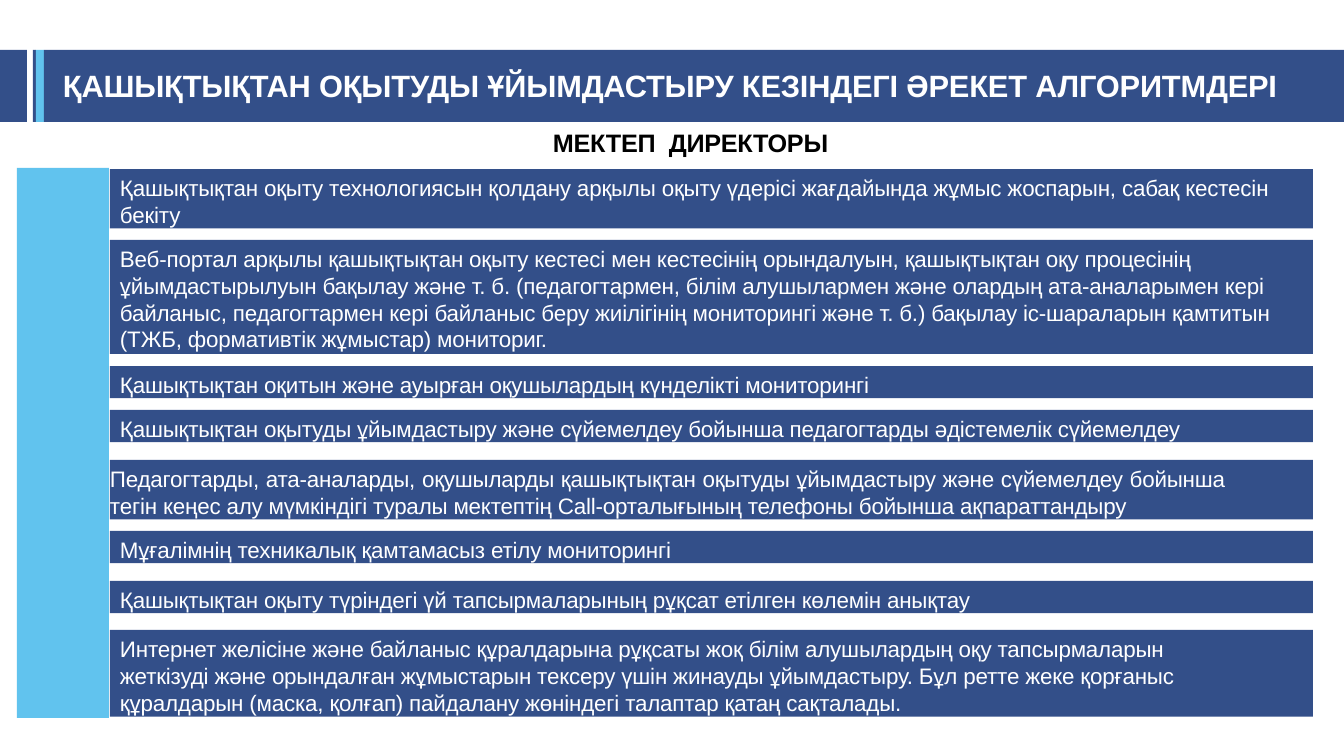
import pptx
import pptx.util
import pptx.dml.color
import pptx.enum.shapes
import pptx.enum.text

TITLE = "ҚАШЫҚТЫҚТАН ОҚЫТУДЫ ҰЙЫМДАСТЫРУ КЕЗІНДЕГІ ӘРЕКЕТ АЛГОРИТМДЕРІ"
SUBTITLE = "МЕКТЕП  ДИРЕКТОРЫ"

# top in px, number of lines, text, extra paragraph format
DUTIES = [
    (169, 2, "Қашықтықтан оқыту технологиясын қолдану арқылы оқыту үдерісі жағдайында "
             "жұмыс жоспарын, сабақ кестесін бекіту", {}),
    (240, 4, "Веб-портал арқылы қашықтықтан оқыту кестесі мен кестесінің орындалуын, "
             "қашықтықтан оқу процесінің ұйымдастырылуын бақылау және т. б. "
             "(педагогтармен, білім алушылармен және олардың ата-аналарымен кері "
             "байланыс, педагогтармен кері байланыс беру жиілігінің мониторингі және "
             "т. б.) бақылау іс-шараларын қамтитын (ТЖБ, формативтік жұмыстар) "
             "мониториг.", {}),
    (366, 1, "Қашықтықтан оқитын және ауырған оқушылардың күнделікті мониторингі", {}),
    (410, 1, "Қашықтықтан оқытуды ұйымдастыру және сүйемелдеу бойынша педагогтарды "
             "әдістемелік сүйемелдеу", {}),
    (460, 2, "Педагогтарды, ата-аналарды, оқушыларды қашықтықтан оқытуды ұйымдастыру "
             "және сүйемелдеу бойынша тегін кеңес алу мүмкіндігі туралы мектептің "
             "Call-орталығының телефоны бойынша ақпараттандыру",
     {"indent": 0, "right": 87, "before": 0, "align": "JUSTIFY"}),
    (531, 1, "Мұғалімнің техникалық қамтамасыз етілу мониторингі", {}),
    (581, 1, "Қашықтықтан оқыту түріндегі үй тапсырмаларының рұқсат етілген көлемін "
             "анықтау", {}),
    (630, 3, "Интернет желісіне және байланыс құралдарына рұқсаты жоқ білім "
             "алушылардың оқу тапсырмаларын жеткізуді және орындалған жұмыстарын "
             "тексеру үшін жинауды ұйымдастыру. Бұл ретте жеке қорғаныс құралдарын "
             "(маска, қолғап) пайдалану жөніндегі талаптар қатаң сақталады.",
     {"right": 87}),
]

THEME = {
    "font": "Arial", "navy": "334F89", "sky": "61C3EE", "white": "FFFFFF", "black": "000000",
    "title_size": 22, "subtitle_size": 18, "duty_size": 16,
}

SLIDE_WIDTH, SLIDE_HEIGHT = 1344, 756
BAND_TOP, BAND_HEIGHT = 50, 72
BAND_PARTS = [(0, 27, "navy"), (33, 3, "navy"), (36, 8, "sky"), (44, 1300, "navy")]
DUTY_LEFT, DUTY_WIDTH = 110, 1203
LINE_HEIGHT, DUTY_INSET = 27.2, 5


def px(length):
    return round(length * 914400 / 100.8)


def color(name):
    return pptx.dml.color.RGBColor.from_string(THEME[name])


def add_block(slide, left, top, width, height, fill):
    shape = slide.shapes.add_shape(
        pptx.enum.shapes.MSO_SHAPE.RECTANGLE, px(left), px(top), px(width), px(height))
    shape.shadow.inherit = False
    shape.fill.solid()
    shape.fill.fore_color.rgb = color(fill)
    shape.line.fill.background()
    return shape


def write(shape, text, size, ink, bold=False, inset=1, indent=1, right=0, before=1,
          align="LEFT", tracking=-10):
    """Fill a shape with one paragraph; tracking is in hundredths of a point."""
    frame = shape.text_frame
    frame_format = {
        "word_wrap": True, "margin_left": 0, "margin_right": 0, "margin_bottom": 0,
        "margin_top": px(inset), "vertical_anchor": pptx.enum.text.MSO_ANCHOR.TOP,
    }
    for name, value in frame_format.items():
        setattr(frame, name, value)

    paragraph = frame.paragraphs[0]
    paragraph.alignment = getattr(pptx.enum.text.PP_ALIGN, align)
    paragraph.space_before = pptx.util.Pt(before)
    properties = paragraph._p.get_or_add_pPr()
    for name, value in {"marL": indent, "marR": right, "indent": 0}.items():
        properties.set(name, str(px(value)))

    run = paragraph.add_run()
    run.text = text
    font_format = {"name": THEME["font"], "size": pptx.util.Pt(THEME[size]), "bold": bold}
    for name, value in font_format.items():
        setattr(run.font, name, value)
    run.font.color.rgb = color(ink)
    run._r.get_or_add_rPr().set("spc", str(tracking))


def add_label(slide, left, top, width, height, text, **text_format):
    box = slide.shapes.add_textbox(px(left), px(top), px(width), px(height))
    write(box, text, **text_format)


def main():
    presentation = pptx.Presentation()
    presentation.slide_width = px(SLIDE_WIDTH)
    presentation.slide_height = px(SLIDE_HEIGHT)
    slide = presentation.slides.add_slide(presentation.slide_layouts[6])

    for left, width, fill in BAND_PARTS:
        add_block(slide, left, BAND_TOP, width, BAND_HEIGHT, fill)
    add_label(slide, 62, 66, 1265, 38, TITLE, size="title_size", ink="white", bold=True)
    add_label(slide, 552, 126, 304, 33, SUBTITLE, size="subtitle_size", ink="black",
              bold=True, tracking=-20)

    add_block(slide, 17, 168, 92, 550, "sky")
    for top, lines, text, extra in DUTIES:
        height = DUTY_INSET + lines * LINE_HEIGHT
        duty = add_block(slide, DUTY_LEFT, top, DUTY_WIDTH, height, "navy")
        duty_format = {"inset": DUTY_INSET, "indent": 10, "before": 3.4} | extra
        write(duty, text, "duty_size", "white", **duty_format)

    presentation.save("out.pptx")


if __name__ == "__main__":
    main()
